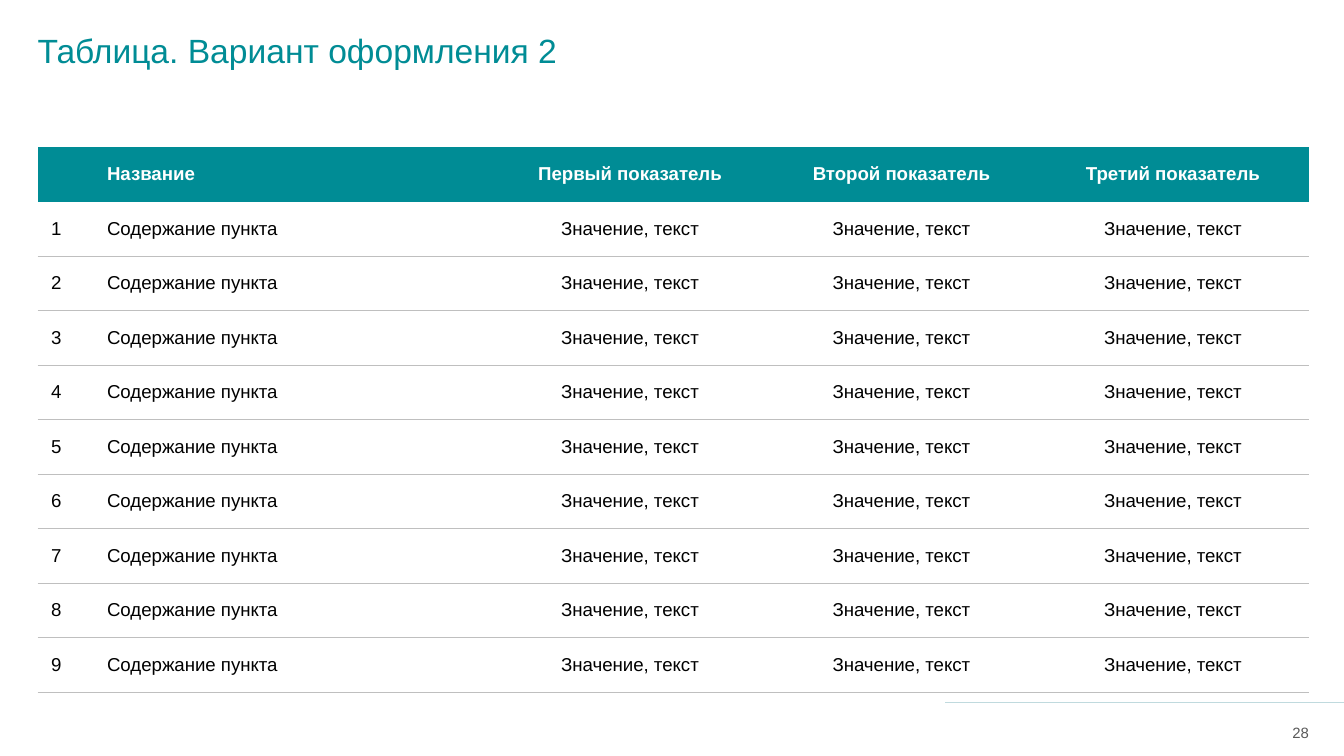
"""Build a slide with a ruled table of nine items and three indicators."""
from dataclasses import dataclass

from lxml.etree import SubElement
from pptx import Presentation
from pptx.dml.color import RGBColor
from pptx.enum.shapes import MSO_CONNECTOR
from pptx.enum.text import MSO_ANCHOR, PP_ALIGN
from pptx.oxml import parse_xml
from pptx.oxml.ns import nsdecls, qn
from pptx.slide import Slide
from pptx.table import _Cell as Cell
from pptx.text.text import TextFrame
from pptx.util import Cm, Pt

TEAL = RGBColor(0x00, 0x8C, 0x95)
PALE = RGBColor(0xC0, 0xDA, 0xDE)
RULE = RGBColor(0xBF, 0xBF, 0xBF)
GREY = RGBColor(0x59, 0x59, 0x59)
WHITE = RGBColor(0xFF, 0xFF, 0xFF)
BLACK = RGBColor(0x00, 0x00, 0x00)

FONT = "Arial"
NO_STYLE = "{2D5ABB26-0587-4C30-8999-92F81FD0307C}"
LEFT = 0.71
TABLE_TOP = 2.78
ROW_HEIGHT = 1.03
ITEM_COUNT = 9


@dataclass(frozen=True)
class Column:
    header: str
    body: str
    width: float
    align: PP_ALIGN


COLUMNS = [
    Column("", "{}", 1.06, PP_ALIGN.LEFT),
    Column("Название", "Содержание пункта", 7.57, PP_ALIGN.LEFT),
    *(
        Column(f"{name} показатель", "Значение, текст", 5.13, PP_ALIGN.CENTER)
        for name in ("Первый", "Второй", "Третий")
    ),
]


def write(tf: TextFrame, text: str, size: float, color: RGBColor,
          align: PP_ALIGN = PP_ALIGN.LEFT, bold: bool = False) -> None:
    """Fill a text frame with one formatted paragraph."""
    tf.text = text
    p = tf.paragraphs[0]
    p.alignment = align
    p.font.name, p.font.size, p.font.bold = FONT, Pt(size), bold
    p.font.color.rgb = color


def clear_margins(tf: TextFrame) -> None:
    """Remove the insets and let the text wrap."""
    tf.margin_left = tf.margin_right = tf.margin_top = tf.margin_bottom = 0
    tf.word_wrap = True


def add_rule(cell: Cell, index: int, side: str) -> None:
    """Draw a thin rule on one side of a cell."""
    cell._tc.get_or_add_tcPr().insert(index, parse_xml(
        f'<a:{side} {nsdecls("a")} w="{Pt(0.5)}"><a:solidFill>'
        f'<a:srgbClr val="{RULE}"/></a:solidFill></a:{side}>'))


def add_title(s: Slide) -> None:
    """Place and format the title."""
    title = s.shapes.title
    title.left, title.top = Cm(LEFT), Cm(0.56)
    title.width, title.height = Cm(23.98), Cm(1.47)
    tf = title.text_frame
    clear_margins(tf)
    tf.vertical_anchor = MSO_ANCHOR.TOP
    write(tf, "Таблица. Вариант оформления 2", 18, TEAL)


def add_footer(s: Slide) -> None:
    """Draw the footer line and the page number."""
    line = s.shapes.add_connector(
        MSO_CONNECTOR.STRAIGHT, Cm(17.86), Cm(13.28), Cm(25.4), Cm(13.28))
    line.line.color.rgb = PALE
    line.line.width = Pt(0.75)
    SubElement(line._element.spPr, qn("a:effectLst"))
    tf = s.shapes.add_textbox(Cm(23.93), Cm(13.61), Cm(0.81), Cm(0.48)).text_frame
    clear_margins(tf)
    tf.vertical_anchor = MSO_ANCHOR.MIDDLE
    write(tf, "28", 8, GREY, PP_ALIGN.RIGHT)


def add_items(s: Slide) -> None:
    """Draw the table with a filled header and ruled rows."""
    rows = ITEM_COUNT + 1
    frame = s.shapes.add_table(
        rows, len(COLUMNS), Cm(LEFT), Cm(TABLE_TOP),
        Cm(sum(column.width for column in COLUMNS)), Cm(ROW_HEIGHT * rows))
    table = frame.table
    table.horz_banding = False
    table._tbl.tblPr.find(qn("a:tableStyleId")).text = NO_STYLE
    for row in table.rows:
        row.height = Cm(ROW_HEIGHT)
    for c, column in enumerate(COLUMNS):
        table.columns[c].width = Cm(column.width)
        for r in range(rows):
            cell = table.cell(r, c)
            cell.vertical_anchor = MSO_ANCHOR.MIDDLE
            if r == 0:
                cell.fill.solid()
                cell.fill.fore_color.rgb = TEAL
                write(cell.text_frame, column.header, 10, WHITE, column.align, True)
                continue
            cell.fill.background()
            add_rule(cell, 0, "lnB")
            if r > 1:
                add_rule(cell, 0, "lnT")
            write(cell.text_frame, column.body.format(r), 10, BLACK, column.align)


def main() -> None:
    """Build and save the presentation."""
    prs = Presentation()
    prs.slide_width, prs.slide_height = Cm(25.4), Cm(14.29)
    s = prs.slides.add_slide(prs.slide_layouts[5])
    add_title(s)
    add_footer(s)
    add_items(s)
    prs.save("out.pptx")


if __name__ == "__main__":
    main()
